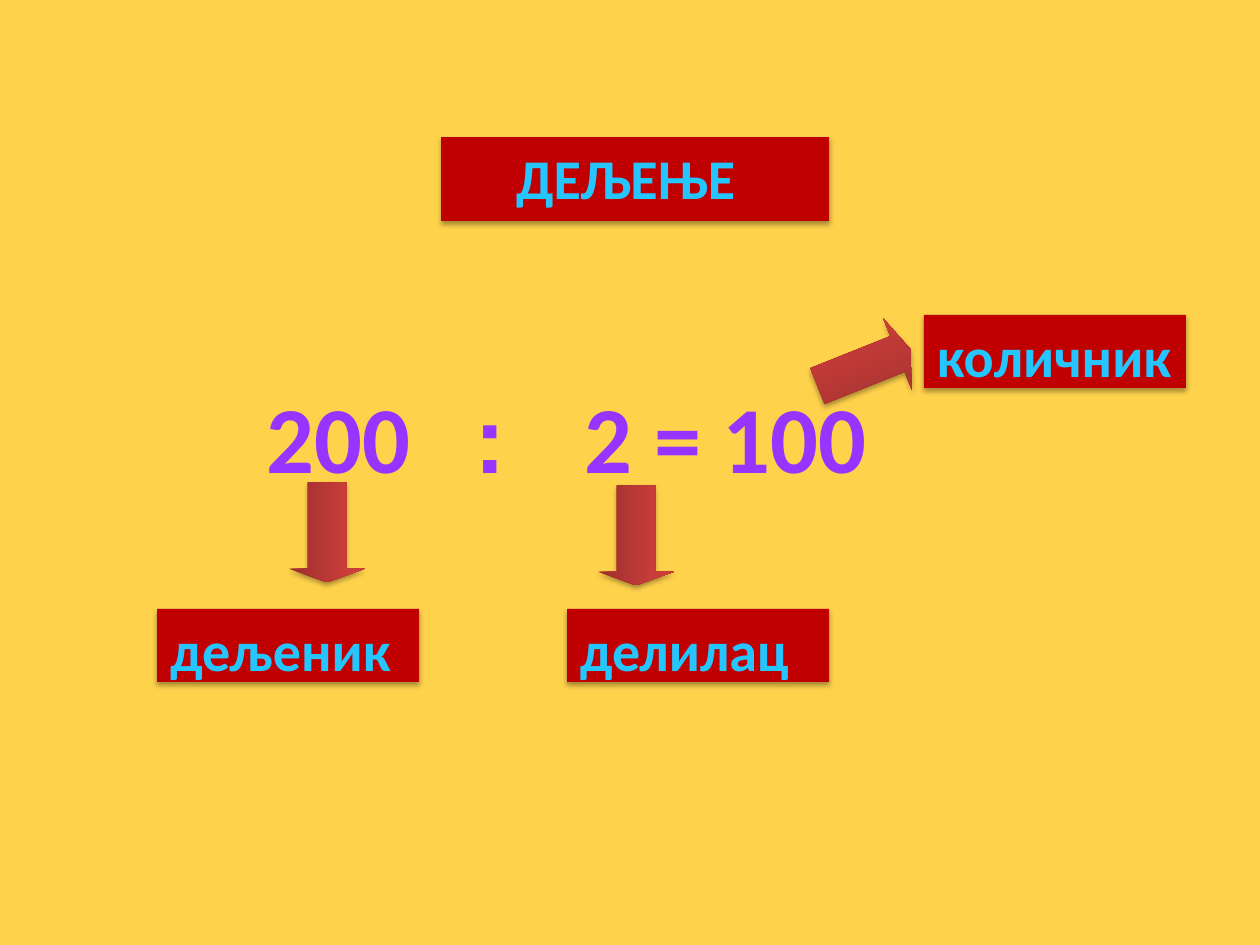
from dataclasses import dataclass

from lxml.etree import SubElement
from pptx import Presentation
from pptx.dml.color import RGBColor as RGB
from pptx.enum.shapes import MSO_SHAPE as SHAPE
from pptx.enum.text import MSO_ANCHOR as ANCHOR, PP_ALIGN as ALIGN
from pptx.oxml.ns import qn
from pptx.util import Pt

PX = 914400 // 126


@dataclass(frozen=True)
class Theme:
    background: str = "FFD24C"
    label_fill: str = "C00000"
    label_text: str = "25C6FF"
    equation_text: str = "9933FF"
    arrow_dark: str = "9C2F2D"
    arrow_light: str = "CB3E3A"
    shadow: str = "000000"
    font: str = "Calibri"
    colon_font: str = "Arial"
    label_size: int = 32
    equation_size: int = 54


THEME = Theme()


def px(*values):
    return [v * PX for v in values]


def add_run(p, text, size, color, font=THEME.font):
    r = p.add_run()
    r.text = text
    r.font.size = Pt(size)
    r.font.bold = True
    r.font.name = font
    r.font.color.rgb = RGB.from_string(color)


def add_shadow(sp):
    sp.shadow.inherit = False
    effects = sp._element.spPr.find(qn("a:effectLst"))
    outer = SubElement(effects, qn("a:outerShdw"), blurRad=str(Pt(3.1)),
                       dist=str(Pt(1.8)), dir="5400000", rotWithShape="0")
    color = SubElement(outer, qn("a:srgbClr"), val=THEME.shadow)
    SubElement(color, qn("a:alpha"), val="35000")


def add_equation(s, box, start, tabs, parts):
    tf = s.shapes.add_textbox(*px(*box)).text_frame
    tf.word_wrap = True
    tf.vertical_anchor = ANCHOR.MIDDLE
    tf.margin_left = start * PX
    p = tf.paragraphs[0]
    p.alignment = ALIGN.LEFT
    stops = SubElement(p._p.get_or_add_pPr(), qn("a:tabLst"))
    for tab in tabs:
        SubElement(stops, qn("a:tab"), pos=str(tab * PX), algn="l")
    for text, font in parts:
        add_run(p, text, THEME.equation_size, THEME.equation_text, font)


def add_label(s, text, box, inset=13):
    sp = s.shapes.add_shape(SHAPE.RECTANGLE, *px(*box))
    sp.fill.solid()
    sp.fill.fore_color.rgb = RGB.from_string(THEME.label_fill)
    sp.line.fill.background()
    add_shadow(sp)
    tf = sp.text_frame
    tf.word_wrap = True
    tf.vertical_anchor = ANCHOR.TOP
    tf.margin_left = inset * PX
    p = tf.paragraphs[0]
    p.alignment = ALIGN.LEFT
    p.space_before = Pt(2)
    add_run(p, text, THEME.label_size, THEME.label_text)


def add_arrow(s, left, top, rotation):
    sp = s.shapes.add_shape(SHAPE.RIGHT_ARROW, *px(left, top, 100, 77))
    sp.adjustments[0] = 0.5
    sp.adjustments[1] = 0.18
    sp.rotation = rotation
    sp.fill.gradient()
    sp.fill.gradient_angle = 90
    dark, light = sp.fill.gradient_stops
    dark.color.rgb = RGB.from_string(THEME.arrow_dark)
    dark.position = 0
    light.color.rgb = RGB.from_string(THEME.arrow_light)
    light.position = 0.8
    sp.line.fill.background()
    add_shadow(sp)


def main():
    prs = Presentation()
    prs.slide_width, prs.slide_height = px(1260, 945)
    s = prs.slides.add_slide(prs.slide_layouts[6])
    s.background.fill.solid()
    s.background.fill.fore_color.rgb = RGB.from_string(THEME.background)

    add_equation(s, (0, 357, 1134, 157), 267, (208, 318),
                 [("200\t", THEME.font), (":\t", THEME.colon_font),
                  ("2 = 100", THEME.font)])
    add_label(s, "ДЕЉЕЊЕ", (441, 137, 388, 84), inset=75)
    for text, left, top in [("количник", 924, 315), ("делилац", 567, 609),
                            ("дељеник", 157, 609)]:
        add_label(s, text, (left, top, 262, 73))
    for left, top, rotation in [(277, 494, 90), (586, 497, 90),
                                (814, 329, 338.2)]:
        add_arrow(s, left, top, rotation)
    prs.save("out.pptx")


if __name__ == "__main__":
    main()
